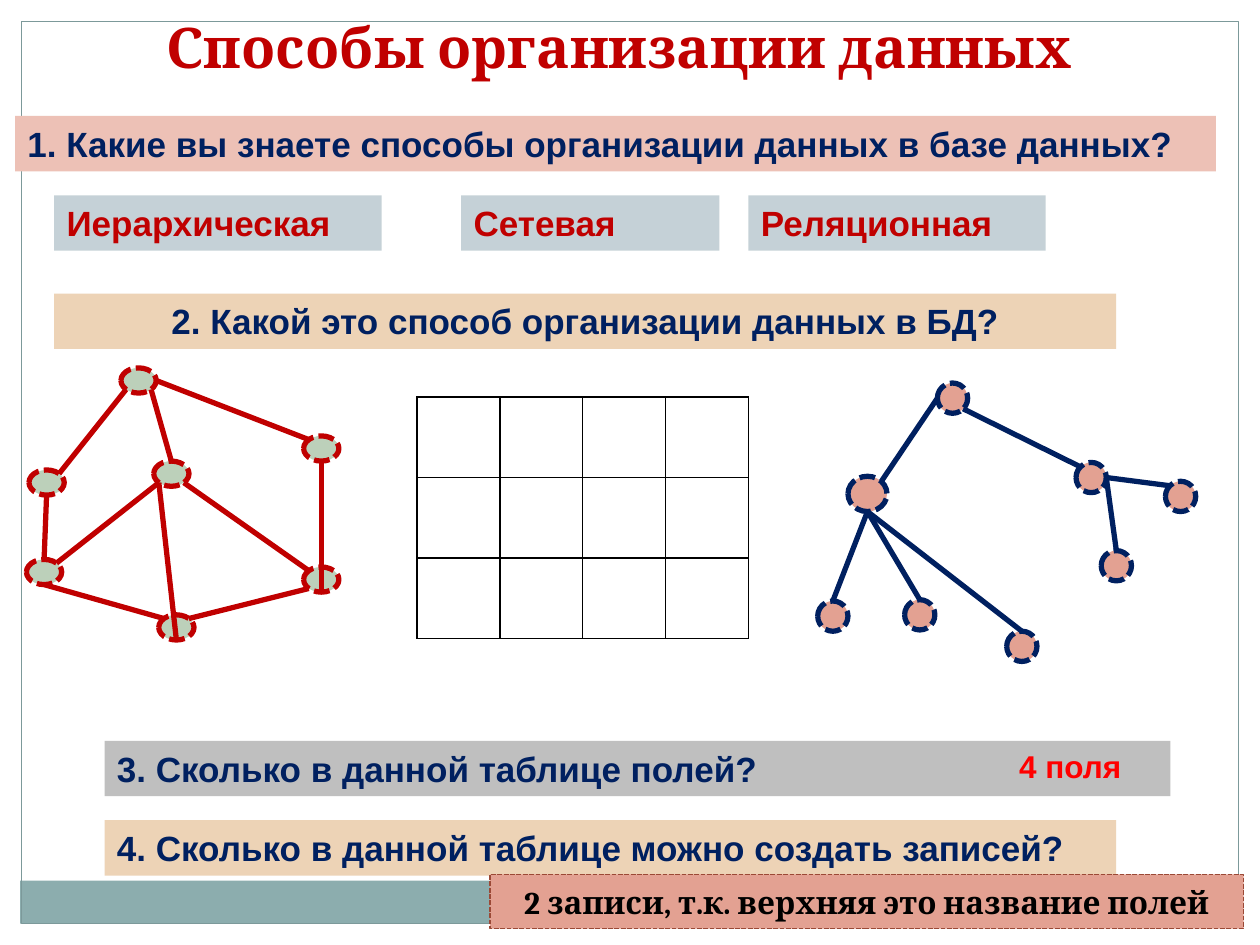
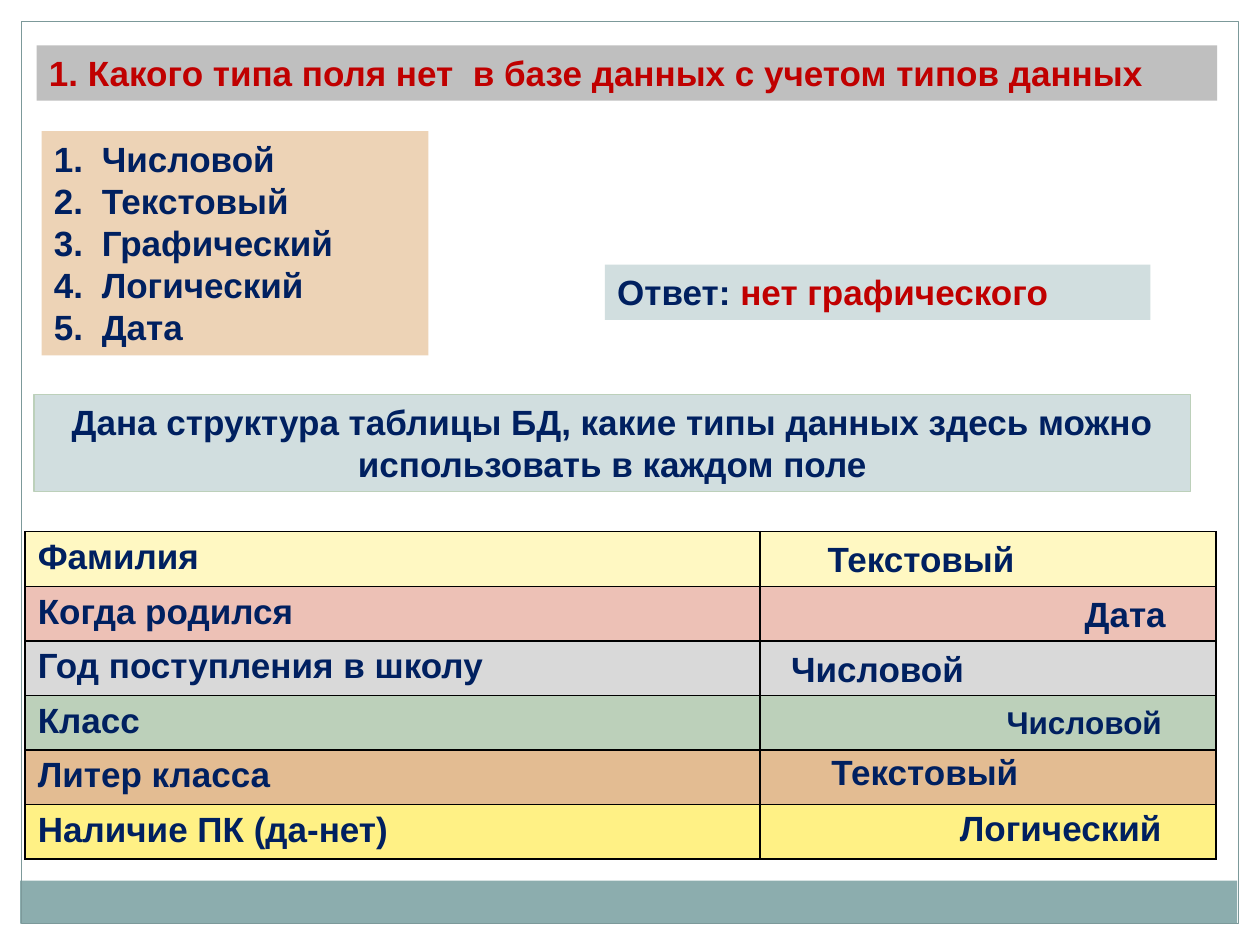
import math

from lxml import etree
from pptx import Presentation
from pptx.dml.color import RGBColor
from pptx.enum import dml, shapes, text
from pptx.oxml import ns
from pptx.util import Inches, Pt

# Shared style
NAVY, RED, BLACK = "002060", "C00000", "000000"
SAND, GREY, ROSE, CORAL = "EDD3B6", "BFBFBF", "EDC1B6", "E3A192"
STEEL, MIST, SAGE = "C5D1D7", "D1DEDF", "BCD0BA"
FRAME, FOOTER = "7C999A", "8CADAE"
LEFT, CENTER = text.PP_ALIGN.LEFT, text.PP_ALIGN.CENTER

# Slide 1: (box, text, fill, text options)
TITLE = "Способы организации данных"
QUESTIONS = [
    ((0.12, 0.92, 9.53, 0.44), "1. Какие вы знаете способы организации данных в базе данных?", ROSE, {}),
    ((0.43, 2.33, 8.43, 0.44), "2. Какой это способ организации данных в БД?", SAND, {"align": CENTER}),
    ((0.83, 5.88, 8.46, 0.44), "3. Сколько в данной таблице полей?", GREY, {}),
    ((0.83, 6.51, 8.03, 0.44), "4. Сколько в данной таблице можно создать записей?", SAND, {}),
]
MODELS = [("Иерархическая", 0.43, 2.6), ("Сетевая", 3.66, 2.05), ("Реляционная", 5.94, 2.36)]
FIELDS_ANSWER = "4 поля"
RECORDS_ANSWER = "2 записи, т.к. верхняя это название полей"

# Graphs: nodes are boxes, edges run between compass points of two nodes
TREE = {
    "fill": CORAL, "line": NAVY,
    "nodes": {
        "root": (7.44, 3.04, 0.24, 0.24), "right": (8.54, 3.67, 0.24, 0.24),
        "left": (6.73, 3.78, 0.31, 0.28), "left1": (6.49, 4.77, 0.24, 0.24),
        "left2": (7.18, 4.76, 0.24, 0.24), "left3": (7.99, 5.01, 0.24, 0.24),
        "right1": (8.74, 4.37, 0.24, 0.24), "right2": (9.25, 3.82, 0.24, 0.24),
    },
    "edges": [
        ("root", "SE", "right", "NW"), ("right", "E", "right2", "NW"),
        ("right", "E", "right1", "N"), ("root", "W", "left", "NE"),
        ("left", "S", "left1", "N"), ("left", "S", "left2", "N"),
        ("left", "S", "left3", "N"),
    ],
}
NET_NODES = {
    "top": (0.96, 2.92), "east": (2.41, 3.46), "west": (0.23, 3.73), "hub": (1.22, 3.66),
    "southwest": (0.21, 4.44), "southeast": (2.41, 4.5), "bottom": (1.26, 4.88),
}
NETWORK = {
    "fill": SAGE, "line": RED,
    "nodes": {name: (*at, 0.28, 0.2) for name, at in NET_NODES.items()},
    "edges": [
        ("top", "SW", "west", "NE"), ("top", "E", "east", "NW"),
        ("west", "S", "southwest", "N"), ("top", "SE", "hub", "N"),
        ("hub", "SW", "southwest", "NE"), ("southwest", "S", "bottom", "NW"),
        ("hub", "SE", "southeast", "NW"), ("east", "S", "southeast", "S"),
        ("southeast", "SW", "bottom", "NE"), ("hub", "SW", "bottom", "S"),
    ],
}
COMPASS = ["E", "SE", "S", "SW", "W", "NW", "N", "NE"]

# Slide 2
TYPE_QUESTION = "1. Какого типа поля нет  в базе данных с учетом типов данных"
TYPES = ["Числовой", "Текстовый", "Графический", "Логический", "Дата"]
TYPE_ANSWER = [("Ответ:", NAVY), (" нет графического", RED)]
TASK = "Дана структура таблицы БД, какие типы данных здесь можно использовать в каждом поле"
FIELDS = [
    ("Фамилия", "FFF8C2"), ("Когда родился", ROSE), ("Год поступления в школу", "D9D9D9"),
    ("Класс", SAGE), ("Литер класса", "E3BC92"), ("Наличие ПК (да-нет)", "FFF185"),
]
FIELD_TYPES = [
    ("Текстовый", (6.47, 4.22, 1.69, 0.44), 20), ("Дата", (8.51, 4.65, 0.94, 0.44), 20),
    ("Числовой", (6.18, 5.09, 1.97, 0.44), 20), ("Числовой", (7.89, 5.53, 1.56, 0.4), 18),
    ("Текстовый", (6.5, 5.91, 1.82, 0.44), 20), ("Логический", (7.52, 6.35, 1.93, 0.44), 20),
]


def rgb(value):
    return RGBColor.from_string(value)


def inches(box):
    return [Inches(v) for v in box]


def set_line(line, color, width, dashed=False):
    line.color.rgb = rgb(color)
    line.width = Pt(width)
    if dashed:
        line.dash_style = dml.MSO_LINE.SQUARE_DOT


def style(p, size=20, color=NAVY, font="Arial", align=LEFT):
    p.alignment = align
    p.font.name, p.font.size, p.font.bold = font, Pt(size), True
    p.font.color.rgb = rgb(color)


def write(sp, lines, anchor=text.MSO_ANCHOR.TOP, numbered=False, **look):
    """Each line is a string or a list of (text, colour) runs."""
    tf = sp.text_frame
    tf.word_wrap, tf.vertical_anchor = True, anchor
    for i, line in enumerate(lines):
        p = tf.add_paragraph() if i else tf.paragraphs[0]
        style(p, **look)
        if isinstance(line, str):
            p.add_run().text = line
        else:
            for words, color in line:
                r = p.add_run()
                r.text = words
                r.font.color.rgb = rgb(color)
        if numbered:
            pPr = p._p.get_or_add_pPr()
            pPr.set("marL", str(Inches(0.38)))
            pPr.set("indent", str(-Inches(0.38)))
            number = etree.Element(ns.qn("a:buAutoNum"), type="arabicPeriod")
            pPr.insert(0, number)


def add_shape(s, box, fill=None, line=None, kind=shapes.MSO_SHAPE.RECTANGLE):
    sp = s.shapes.add_shape(kind, *inches(box))
    sp.shadow.inherit = False
    if fill:
        sp.fill.solid()
        sp.fill.fore_color.rgb = rgb(fill)
    else:
        sp.fill.background()
    if line:
        set_line(sp.line, *line)
    else:
        sp.line.fill.background()
    return sp


def add_band(s, box, lines, fill, line=None, **look):
    write(add_shape(s, box, fill, line), lines, **look)


def add_label(s, box, words, **look):
    write(s.shapes.add_textbox(*inches(box)), [words], **look)


def compass_point(box, direction):
    x, y, w, h = box
    angle = COMPASS.index(direction) * math.pi / 4
    return x + w / 2 * (1 + math.cos(angle)), y + h / 2 * (1 + math.sin(angle))


def add_graph(s, graph):
    nodes, color = graph["nodes"], graph["line"]
    for box in nodes.values():
        add_shape(s, box, graph["fill"], (color, 3, True), shapes.MSO_SHAPE.OVAL)
    for start, leave, end, arrive in graph["edges"]:
        ends = compass_point(nodes[start], leave) + compass_point(nodes[end], arrive)
        cn = s.shapes.add_connector(shapes.MSO_CONNECTOR.STRAIGHT, *inches(ends))
        set_line(cn.line, color, 3)
        etree.SubElement(cn._element.spPr, ns.qn("a:effectLst"))


def add_grid(s, box, widths, fills):
    """Black-ruled table with one fill (or None) for each row."""
    table = s.shapes.add_table(len(fills), len(widths), *inches(box)).table
    table.first_row = table.horz_banding = False
    for column, width in zip(table.columns, widths):
        column.width = Inches(width)
    for row, fill in zip(table.rows, fills):
        row.height = Inches(box[3] / len(fills))
        for cell in row.cells:
            tcPr = cell._tc.get_or_add_tcPr()
            for side in ("lnL", "lnR", "lnT", "lnB"):
                ln = etree.SubElement(tcPr, ns.qn("a:" + side), w=str(Pt(1)))
                solid = etree.SubElement(ln, ns.qn("a:solidFill"))
                etree.SubElement(solid, ns.qn("a:srgbClr"), val=BLACK)
            if fill:
                cell.fill.solid()
                cell.fill.fore_color.rgb = rgb(fill)
            else:
                cell.fill.background()
    return table


def new_slide(prs):
    s = prs.slides.add_slide(prs.slide_layouts[6])
    add_shape(s, (0.16, 6.99, 9.66, 0.34), FOOTER)
    add_shape(s, (0.17, 0.17, 9.66, 7.16), line=(FRAME, 0.75))
    return s


def build_models_slide(prs):
    s = new_slide(prs)
    add_label(s, (0.35, 0.05, 9.13, 0.64), TITLE, size=32, color=RED, font="Cambria", align=CENTER)
    for box, words, fill, look in QUESTIONS:
        add_band(s, box, [words], fill, **look)
    for name, x, width in MODELS:
        add_band(s, (x, 1.55, width, 0.44), [name], STEEL, color=RED)
    # Three ways to organise data
    add_graph(s, TREE)
    add_graph(s, NETWORK)
    add_grid(s, (3.31, 3.15, 2.63, 1.92), [2.63 / 4] * 4, [None] * 3)
    # Answers
    add_label(s, (7.99, 5.88, 1.04, 0.4), FIELDS_ANSWER, size=18, color="FF0000")
    add_band(s, (3.89, 6.94, 5.98, 0.43), [RECORDS_ANSWER], CORAL, ("9B4936", 0.9, True),
             anchor=text.MSO_ANCHOR.MIDDLE, size=18, color=BLACK, font="Cambria", align=CENTER)


def build_types_slide(prs):
    s = new_slide(prs)
    add_band(s, (0.29, 0.36, 9.37, 0.44), [TYPE_QUESTION], GREY, color=RED)
    add_band(s, (0.33, 1.04, 3.07, 1.78), TYPES, SAND, numbered=True)
    add_band(s, (4.8, 2.1, 4.33, 0.44), [TYPE_ANSWER], MIST)
    add_band(s, (0.27, 3.13, 9.18, 0.77), [TASK], MIST, (SAGE, 0.75), align=CENTER)
    # Table structure, with the answers laid over its second column
    table = add_grid(s, (0.2, 4.22, 9.45, 2.6), [5.83, 3.62], [fill for _, fill in FIELDS])
    for i, (name, _) in enumerate(FIELDS):
        p = table.cell(i, 0).text_frame.paragraphs[0]
        p.add_run().text = name
        style(p)
    for name, box, size in FIELD_TYPES:
        add_label(s, box, name, size=size)


def main():
    prs = Presentation()
    prs.slide_width, prs.slide_height = Inches(10), Inches(7.5)
    build_models_slide(prs)
    build_types_slide(prs)
    prs.save("out.pptx")


if __name__ == "__main__":
    main()
